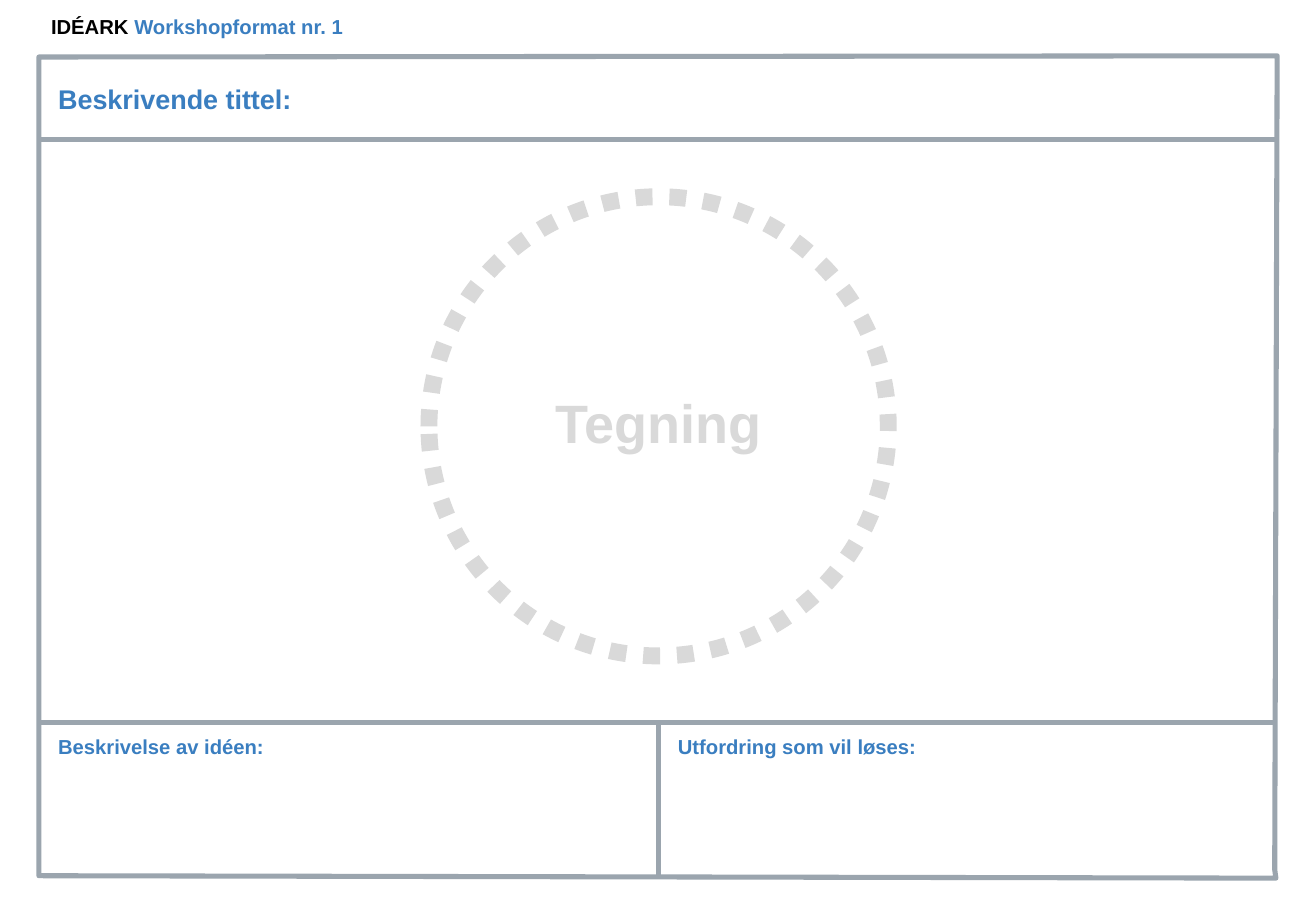
from lxml import etree
from pptx import Presentation
from pptx.dml.color import RGBColor
from pptx.enum.dml import MSO_LINE
from pptx.enum.shapes import MSO_CONNECTOR, MSO_SHAPE
from pptx.enum.text import MSO_ANCHOR, MSO_AUTO_SIZE, PP_ALIGN
from pptx.oxml.ns import qn
from pptx.util import Inches, Pt

STRAIGHT = MSO_CONNECTOR.STRAIGHT
OVAL = MSO_SHAPE.OVAL
DOTTED = MSO_LINE.ROUND_DOT
TOP, MIDDLE = MSO_ANCHOR.TOP, MSO_ANCHOR.MIDDLE
LEFT, CENTER = PP_ALIGN.LEFT, PP_ALIGN.CENTER
NO_FIT = MSO_AUTO_SIZE.NONE

COLORS = {"black": "000000", "blue": "3A7EC0", "frame": "9BA5AE", "sketch": "D9D9D9"}


class Sheet:
    font = "Arial"
    frame_width = 3

    def __init__(self, slide):
        self.slide = slide

    def style_line(self, line, color, width):
        line.color.rgb = RGBColor.from_string(COLORS[color])
        line.width = Pt(width)

    def fill_text(self, box, runs, size, anchor=TOP, align=LEFT):
        """Write (text, colour) runs as one bold paragraph."""
        tf = box.text_frame
        tf.word_wrap = True
        tf.auto_size = NO_FIT
        tf.vertical_anchor = anchor
        p = tf.paragraphs[0]
        p.alignment = align
        p.font.name, p.font.size, p.font.bold = self.font, Pt(size), True
        for text, color in runs:
            r = p.add_run()
            r.text = text
            r.font.color.rgb = RGBColor.from_string(COLORS[color])

    def title(self, bounds, runs, size):
        box = self.slide.shapes.title
        box.left, box.top, box.width, box.height = map(Inches, bounds)
        self.fill_text(box, runs, size, MIDDLE)

    def label(self, bounds, text, size, color="blue", anchor=TOP, align=LEFT, shapes=None):
        shapes = shapes or self.slide.shapes
        box = shapes.add_textbox(*map(Inches, bounds))
        self.fill_text(box, [(text, color)], size, anchor, align)

    def outline(self, points):
        start, *rest = [(Inches(x), Inches(y)) for x, y in points]
        builder = self.slide.shapes.build_freeform(*start)
        builder.add_line_segments(rest, close=True)
        sp = builder.convert_to_shape()
        sp.shadow.inherit = False
        sp.fill.background()
        self.style_line(sp.line, "frame", self.frame_width)

    def divider(self, x1, y1, x2, y2):
        line = self.slide.shapes.add_connector(STRAIGHT, *map(Inches, (x1, y1, x2, y2)))
        etree.SubElement(line._element.spPr, qn("a:effectLst"))
        self.style_line(line.line, "frame", self.frame_width)
        # The effect list must follow the line properties
        line._element.spPr.append(line._element.spPr.find(qn("a:effectLst")))

    def dotted_circle(self, bounds, shapes):
        sp = shapes.add_shape(OVAL, *map(Inches, bounds))
        sp.shadow.inherit = False
        sp.fill.background()
        self.style_line(sp.line, "sketch", 10)
        sp.line.dash_style = DOTTED


def main():
    prs = Presentation()
    prs.slide_width, prs.slide_height = Inches(10.83), Inches(7.5)
    s = prs.slides.add_slide(prs.slide_layouts[5])
    sheet = Sheet(s)

    left, right, middle, bottom = 0.32, 10.51, 5.42, 7.23
    title_line, text_line = 1.15, 5.95

    sheet.title((left, 0.08, 3.39, 0.28),
                [("IDÉARK ", "black"), ("Workshopformat nr. 1", "blue")], 12)
    sheet.outline([(10.49, 7.16), (right, 0.46), (left, 0.47), (left, 7.21), (10.5, bottom)])
    for y in (title_line, text_line):
        sheet.divider(left, y, right, y)
    sheet.divider(middle, text_line, middle, bottom)

    sheet.label((0.38, 0.55, 2.51, 0.52), "Beskrivende tittel:", 16, anchor=MIDDLE)
    for x, width, text in ((0.38, 2.42, "Beskrivelse av idéen:"),
                           (5.48, 4.95, "Utfordring som vil løses:")):
        sheet.label((x, 6, width, 1.03), text, 12)

    drawing = s.shapes.add_group_shape().shapes
    sheet.label((4.07, 3.16, 2.7, 0.7), "Tegning", 32, "sketch", align=CENTER, shapes=drawing)
    sheet.dotted_circle((3.53, 1.62, 3.78, 3.78), drawing)

    prs.save("out.pptx")


if __name__ == "__main__":
    main()
